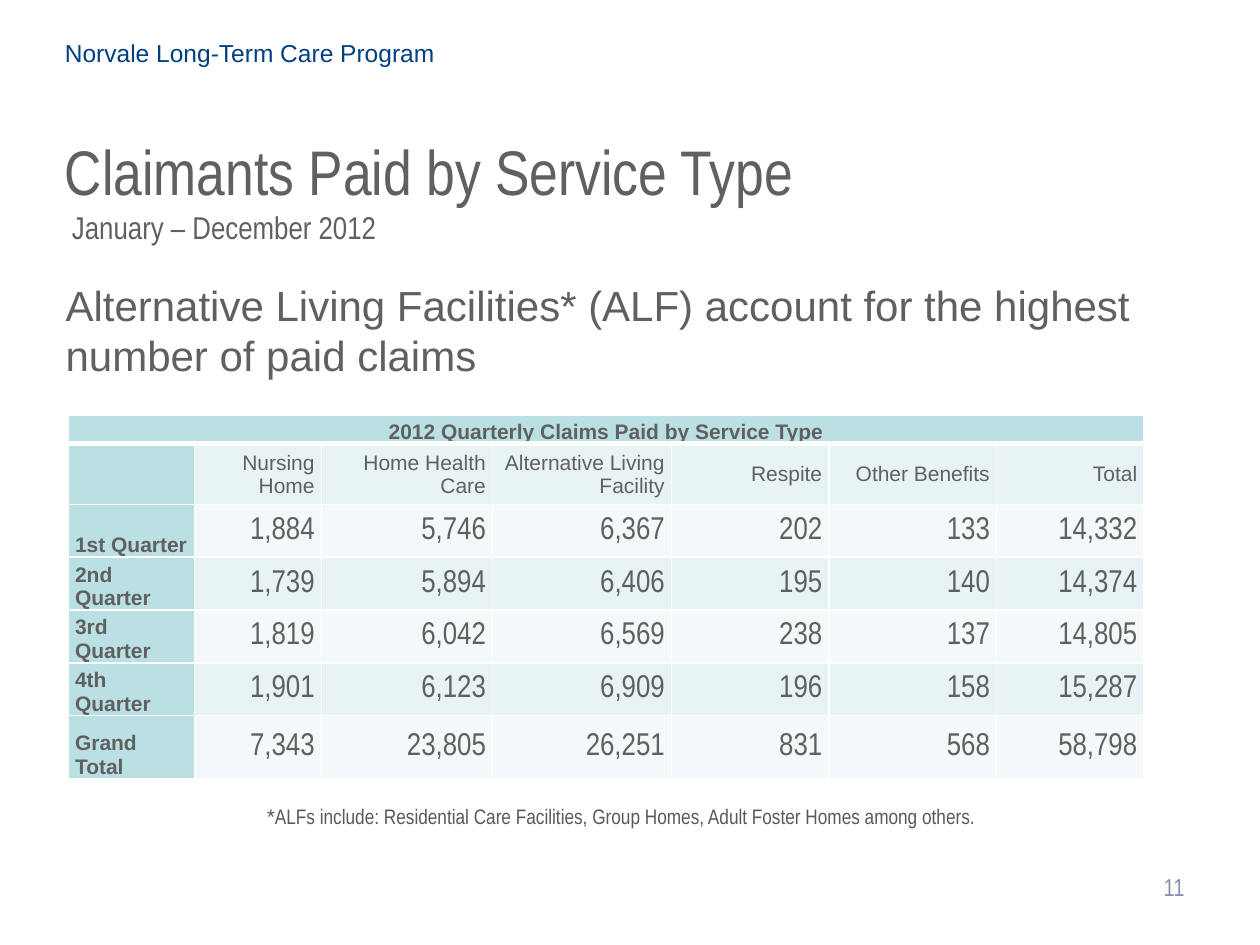
"""Build the slide on long-term care claimants by service type."""
from lxml import etree
from pptx import Presentation
from pptx.dml.color import RGBColor
from pptx.enum.text import MSO_ANCHOR, PP_ALIGN
from pptx.oxml.ns import qn
from pptx.util import Pt

LEFT, CENTER, RIGHT = PP_ALIGN.LEFT, PP_ALIGN.CENTER, PP_ALIGN.RIGHT
TOP, MIDDLE, BOTTOM = MSO_ANCHOR.TOP, MSO_ANCHOR.MIDDLE, MSO_ANCHOR.BOTTOM

GRAY = RGBColor(0x60, 0x60, 0x60)
NOTE_GRAY = RGBColor(0x59, 0x59, 0x59)
NAVY = RGBColor(0x00, 0x40, 0x80)
PAGE_BLUE = RGBColor(0x89, 0x92, 0xAC)
TEAL = RGBColor(0xBB, 0xE0, 0xE3)
STRIPES = (RGBColor(0xE7, 0xF3, 0xF4), RGBColor(0xF3, 0xF9, 0xFA))
WHITE = RGBColor(0xFF, 0xFF, 0xFF)

SANS, NARROW = "Arial", "Arial Narrow"
COL_WIDTHS = (72, 72.7, 97.9, 102.2, 90, 95.8, 84.2)
ROW_HEIGHTS = (16.6, 34.6, 30.2, 30.2, 30.2, 30.2, 36)
TABLE_TITLE = "2012 Quarterly Claims Paid by Service Type"
ROWS = (
    ("", "Nursing Home", "Home Health Care", "Alternative Living Facility",
     "Respite", "Other Benefits", "Total"),
    ("1st Quarter", "1,884", "5,746", "6,367", "202", "133", "14,332"),
    ("2nd Quarter", "1,739", "5,894", "6,406", "195", "140", "14,374"),
    ("3rd Quarter", "1,819", "6,042", "6,569", "238", "137", "14,805"),
    ("4th Quarter", "1,901", "6,123", "6,909", "196", "158", "15,287"),
    ("Grand Total", "7,343", "23,805", "26,251", "831", "568", "58,798"),
)


def style(r, size, name, color, bold=False):
    """Set the font of a run."""
    r.font.size = Pt(size)
    r.font.name = name
    r.font.bold = bold
    r.font.color.rgb = color


def set_margins(box, left, top, right, bottom):
    """Set the inner margins of a text frame or a cell."""
    box.margin_left, box.margin_top = Pt(left), Pt(top)
    box.margin_right, box.margin_bottom = Pt(right), Pt(bottom)


def add_text(s, left, top, width, height, runs, color, align=LEFT, anchor=TOP, inset=None):
    """Add a one-paragraph text box from (text, size, font) runs."""
    tf = s.shapes.add_textbox(Pt(left), Pt(top), Pt(width), Pt(height)).text_frame
    tf.word_wrap = True
    tf.vertical_anchor = anchor
    if inset is not None:
        set_margins(tf, inset, inset, inset, inset)
    p = tf.paragraphs[0]
    p.alignment = align
    for text, size, name in runs:
        r = p.add_run()
        r.text = text.rstrip("\n")
        style(r, size, name, color)
        if text.endswith("\n"):
            p.add_line_break()


def set_borders(cell, bottom):
    """Draw white borders round a cell."""
    tc_pr = cell._tc.get_or_add_tcPr()
    for tag, width in (("a:lnL", 1), ("a:lnR", 1), ("a:lnT", 1), ("a:lnB", bottom)):
        line = etree.SubElement(tc_pr, qn(tag), w=str(Pt(width)))
        fill = etree.SubElement(line, qn("a:solidFill"))
        etree.SubElement(fill, qn("a:srgbClr"), val=str(WHITE))


def fill_cell(cell, text, fill, size, name, align, anchor, bold=False, bottom=1):
    """Set the text, fill and borders of a table cell."""
    cell.text = text
    set_margins(cell, 3.9, 0.5, 3.9, 0)
    cell.vertical_anchor = anchor
    set_borders(cell, bottom)
    cell.fill.solid()
    cell.fill.fore_color.rgb = fill
    p = cell.text_frame.paragraphs[0]
    p.alignment = align
    for r in p.runs:
        style(r, size, name, GRAY, bold)


def add_claims_table(s):
    """Add the table of quarterly claims."""
    table = s.shapes.add_table(len(ROW_HEIGHTS), len(COL_WIDTHS), Pt(39), Pt(237),
                               Pt(sum(COL_WIDTHS)), Pt(sum(ROW_HEIGHTS))).table
    for column, width in zip(table.columns, COL_WIDTHS):
        column.width = Pt(width)
    for row, height in zip(table.rows, ROW_HEIGHTS):
        row.height = Pt(height)
    title = table.cell(0, 0)
    title.merge(table.cell(0, len(COL_WIDTHS) - 1))
    fill_cell(title, TABLE_TITLE, TEAL, 12, SANS, CENTER, BOTTOM, True, 3)
    for i, values in enumerate(ROWS):
        size, name = (18, NARROW) if i else (12, SANS)
        fill_cell(table.cell(i + 1, 0), values[0], TEAL, 12, SANS, LEFT, BOTTOM, True)
        for j, value in enumerate(values[1:], 1):
            fill_cell(table.cell(i + 1, j), value, STRIPES[i % 2], size, name, RIGHT, MIDDLE)


def main():
    """Build and save the slide."""
    prs = Presentation()
    prs.slide_width, prs.slide_height = Pt(720), Pt(540)
    s = prs.slides.add_slide(prs.slide_layouts[6])
    add_text(s, 30, 72, 678, 66, [("Claimants Paid by Service Type\n", 36, NARROW),
                                  (" January – December 2012", 18, NARROW)], GRAY)
    add_text(s, 516, 492, 168, 29, [("11", 14, NARROW)], PAGE_BLUE, RIGHT, MIDDLE)
    add_text(s, 30, 18, 654, 29, [("Norvale Long-Term Care Program", 14, SANS)], NAVY)
    add_text(s, 36, 158, 642, 61,
             [("Alternative Living Facilities* (ALF) account for the highest "
               "number of paid claims", 24, SANS)], GRAY, inset=1.5)
    add_claims_table(s)
    add_text(s, 26.5, 457.5, 657, 17,
             [("*", 12, SANS),
              ("ALFs include: Residential Care Facilities, Group Homes, "
               "Adult Foster Homes among others.", 12, NARROW)],
             NOTE_GRAY, CENTER, inset=1.5)
    prs.save("out.pptx")


if __name__ == "__main__":
    main()
